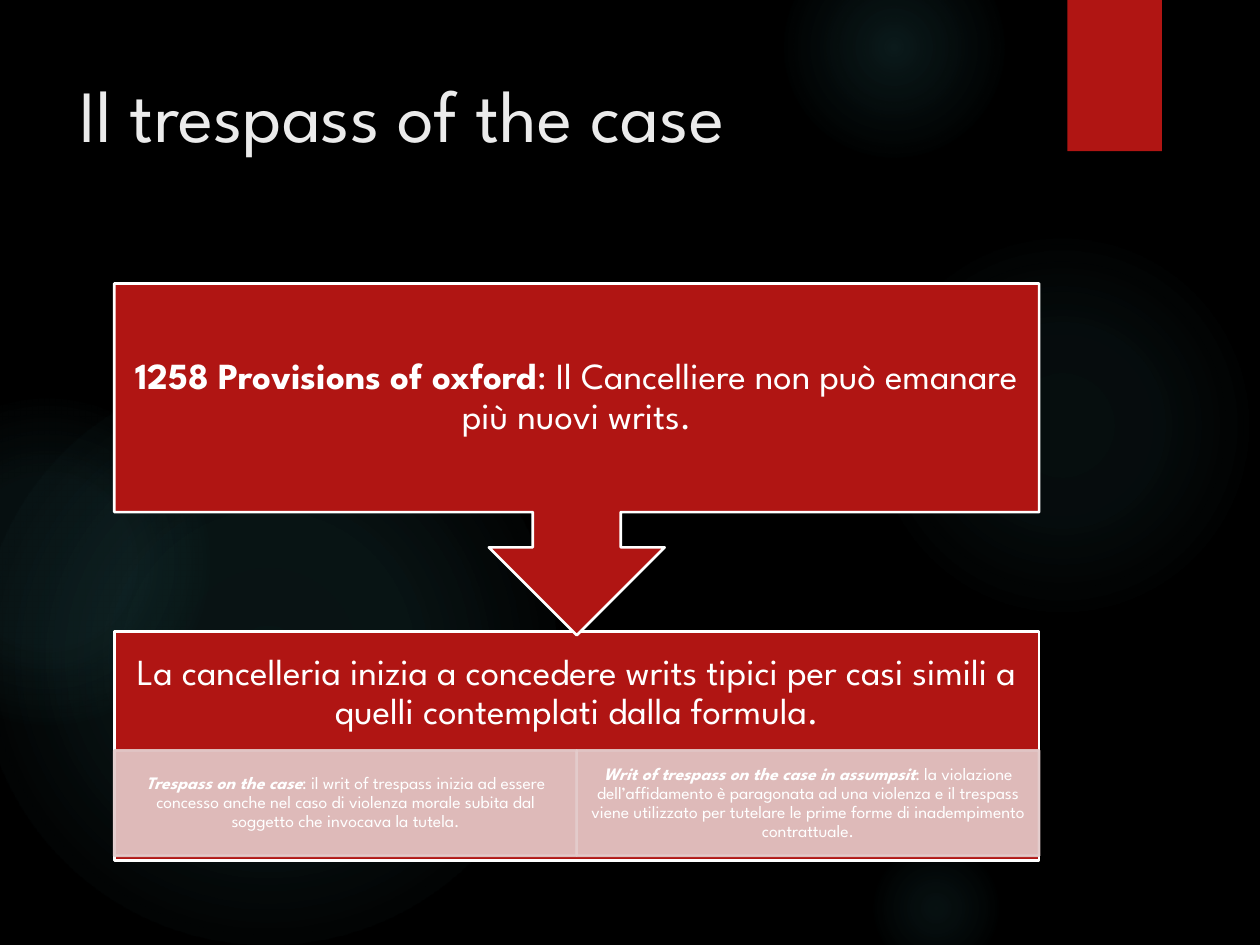
from pptx import Presentation
from pptx.dml.color import RGBColor
from pptx.enum.shapes import MSO_SHAPE
from pptx.enum.text import MSO_ANCHOR, PP_ALIGN
from pptx.oxml import parse_xml
from pptx.oxml.ns import nsdecls, qn
from pptx.util import Pt

FONT = "League Spartan"
RED, WHITE, PALE, TEAL = "B01513", "FFFFFF", "E4CCCC", "50B9C1"

# left, top, diameter, then (position %, opacity %) stops
GLOWS = [
    (496, 132, 222, [(0, 7), (36, 6), (69, 0)]),
    (448, -36, 126, [(0, 14), (36, 7), (73, 0)]),
    (496, 480, 78, [(0, 9), (36, 5), (66, 0)]),
    (-12, 210, 330, [(0, 11), (36, 10), (75, 0)]),
    (-66, 228, 186, [(0, 8), (36, 8), (72, 0)]),
]
DETAILS = [
    ("Trespass on the case",
     ": il writ of trespass inizia ad essere concesso anche nel caso di violenza "
     "morale subita dal soggetto che invocava la tutela."),
    ("Writ of trespass on the case in assumpsit",
     ": la violazione dell’affidamento è paragonata ad una violenza e il trespass "
     "viene utilizzato per tutelare le prime forme di inadempimento contrattuale."),
]


def color(value):
    return RGBColor.from_string(value)


def add_block(page, kind, box, fill, line=None, opacity=100):
    shape = page.shapes.add_shape(kind, *map(Pt, box))
    shape.shadow.inherit = False
    shape.fill.solid()
    shape.fill.fore_color.rgb = color(fill)
    if line:
        shape.line.color.rgb = color(line)
        shape.line.width = Pt(1.5)
    else:
        shape.line.fill.background()
    if opacity < 100:
        for tone in shape.element.spPr.iter(qn("a:srgbClr")):
            tone.append(parse_xml(f'<a:alpha {nsdecls("a")} val="{opacity * 1000}"/>'))
    return shape


def write(shape, text, lead="", size=21, fill=WHITE, italic_lead=False, align=PP_ALIGN.CENTER,
          anchor=MSO_ANCHOR.MIDDLE, insets=(11.5, 11.5), spacing=0.9):
    """Put an optional bold lead and plain text in a shape; insets are (sides, top and bottom)."""
    frame = shape.text_frame
    frame.word_wrap = True
    frame.vertical_anchor = anchor
    frame.margin_left = frame.margin_right = Pt(insets[0])
    frame.margin_top = frame.margin_bottom = Pt(insets[1])
    para = frame.paragraphs[0]
    para.alignment = align
    para.line_spacing = spacing
    for content, bold in ((lead, True), (text, False)):
        if content:
            span = para.add_run()
            span.text = content
            span.font.name = FONT
            span.font.size = Pt(size)
            span.font.bold = bold
            span.font.italic = bold and italic_lead
            span.font.color.rgb = color(fill)


def add_glow(page, left, top, diameter, stops):
    glow = add_block(page, MSO_SHAPE.OVAL, (left, top, diameter, diameter), TEAL)
    marks = "".join(
        f'<a:gs pos="{position * 1000}"><a:srgbClr val="{TEAL}">'
        f'<a:alpha val="{opacity * 1000}"/></a:srgbClr></a:gs>'
        for position, opacity in stops)
    gradient = parse_xml(
        f'<a:gradFill {nsdecls("a")}><a:gsLst>{marks}</a:gsLst><a:path path="circle">'
        '<a:fillToRect l="50000" t="50000" r="50000" b="50000"/></a:path></a:gradFill>')
    properties = glow.element.spPr
    properties.replace(properties.find(qn("a:solidFill")), gradient)


def add_backdrop(page):
    page.background.fill.solid()
    page.background.fill.fore_color.rgb = color("000000")
    for glow in GLOWS:
        add_glow(page, *glow)
    tab = add_block(page, MSO_SHAPE.RECTANGLE, (610, 0, 54, 86.4), RED)
    tab.element.spPr.find(qn("a:effectLst")).append(parse_xml(
        f'<a:outerShdw {nsdecls("a")} blurRad="{Pt(3)}" dist="{Pt(2)}" dir="5400000">'
        '<a:srgbClr val="000000"><a:alpha val="45000"/></a:srgbClr></a:outerShdw>'))


def add_title(page, box, text):
    title = page.shapes.title
    title.left, title.top, title.width, title.height = map(Pt, box)
    write(title, text, size=42, fill="EBEBEB", align=PP_ALIGN.LEFT,
          anchor=MSO_ANCHOR.TOP, insets=(7.2, 3.6), spacing=1)
    page.shapes.element.append(title.element)  # in front of the backdrop


def add_outcome(page, box):
    """Lower box: a heading above a row of equal detail cells."""
    left, top, width, height = box
    add_block(page, MSO_SHAPE.RECTANGLE, box, RED, WHITE)
    heading = page.shapes.add_textbox(Pt(left), Pt(top), Pt(width), Pt(height * 0.54))
    write(heading, "La cancelleria inizia a concedere writs tipici per casi simili a "
                   "quelli contemplati dalla formula.")
    cell_width = width / len(DETAILS)
    for index, (lead, text) in enumerate(DETAILS):
        cell_box = (left + index * cell_width, top + height * 0.52, cell_width, height * 0.46)
        cell = add_block(page, MSO_SHAPE.RECTANGLE, cell_box, PALE, PALE, opacity=90)
        write(cell, text, lead, size=10, italic_lead=True, insets=(5.8, 0.7))


def add_cause(page, box):
    """Upper box, with an arrow pointing down to the outcome."""
    left, top, width, height = box
    callout = add_block(page, MSO_SHAPE.UP_ARROW_CALLOUT, box, RED, WHITE)
    callout.rotation = 180
    label = page.shapes.add_textbox(Pt(left), Pt(top), Pt(width), Pt(height * 0.65))
    write(label, ": Il Cancelliere non può emanare più nuovi writs.", "1258 Provisions of oxford")


def main():
    deck = Presentation()
    deck.slide_width, deck.slide_height = Pt(720), Pt(540)
    page = deck.slides.add_slide(deck.slide_layouts[5])
    add_backdrop(page)
    add_title(page, (38.2, 36, 555.8, 110.2), "Il trespass of the case")
    add_outcome(page, (65.3, 360.7, 528.5, 131))
    add_cause(page, (65.3, 162, 528.5, 201))
    deck.save("out.pptx")


if __name__ == "__main__":
    main()
